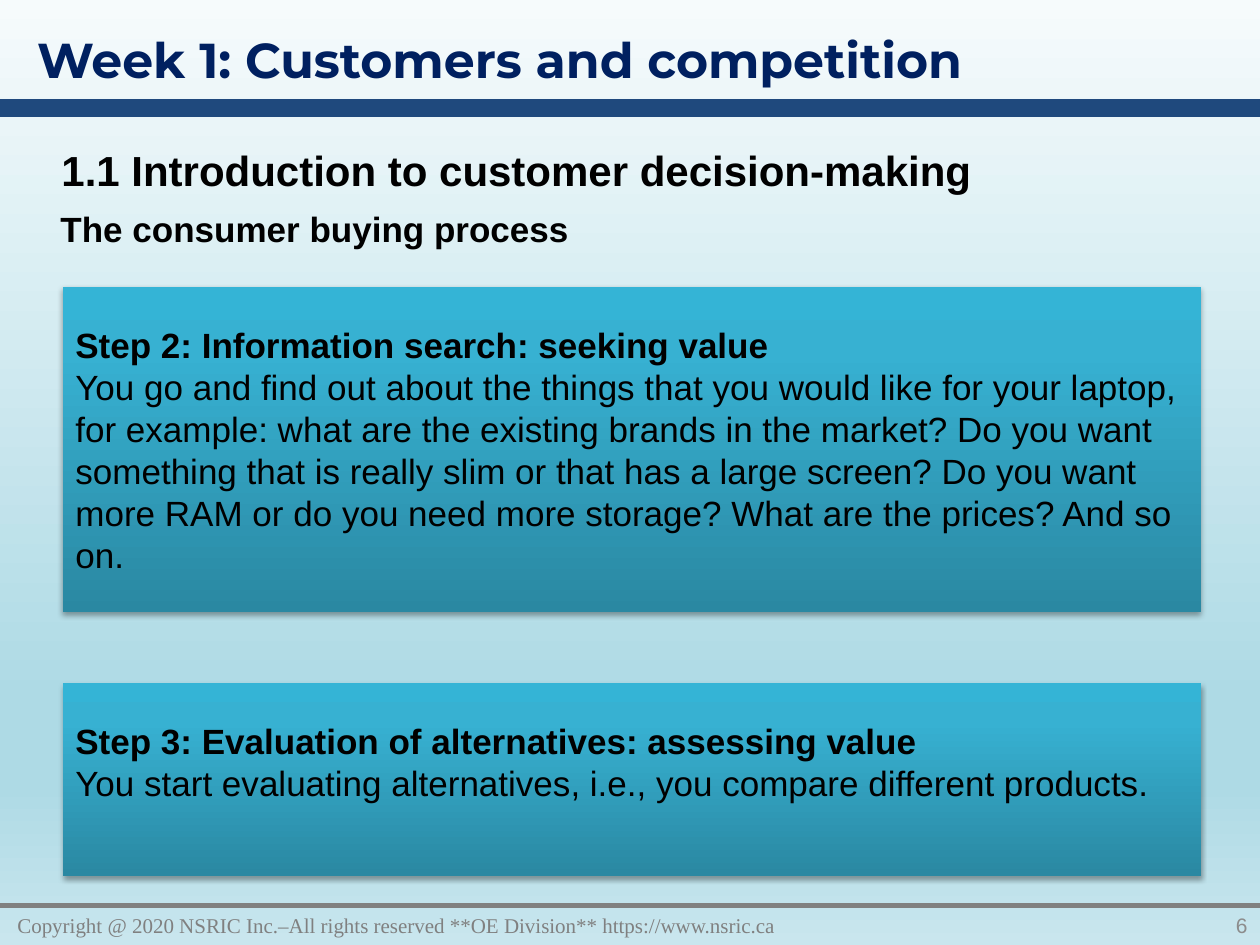
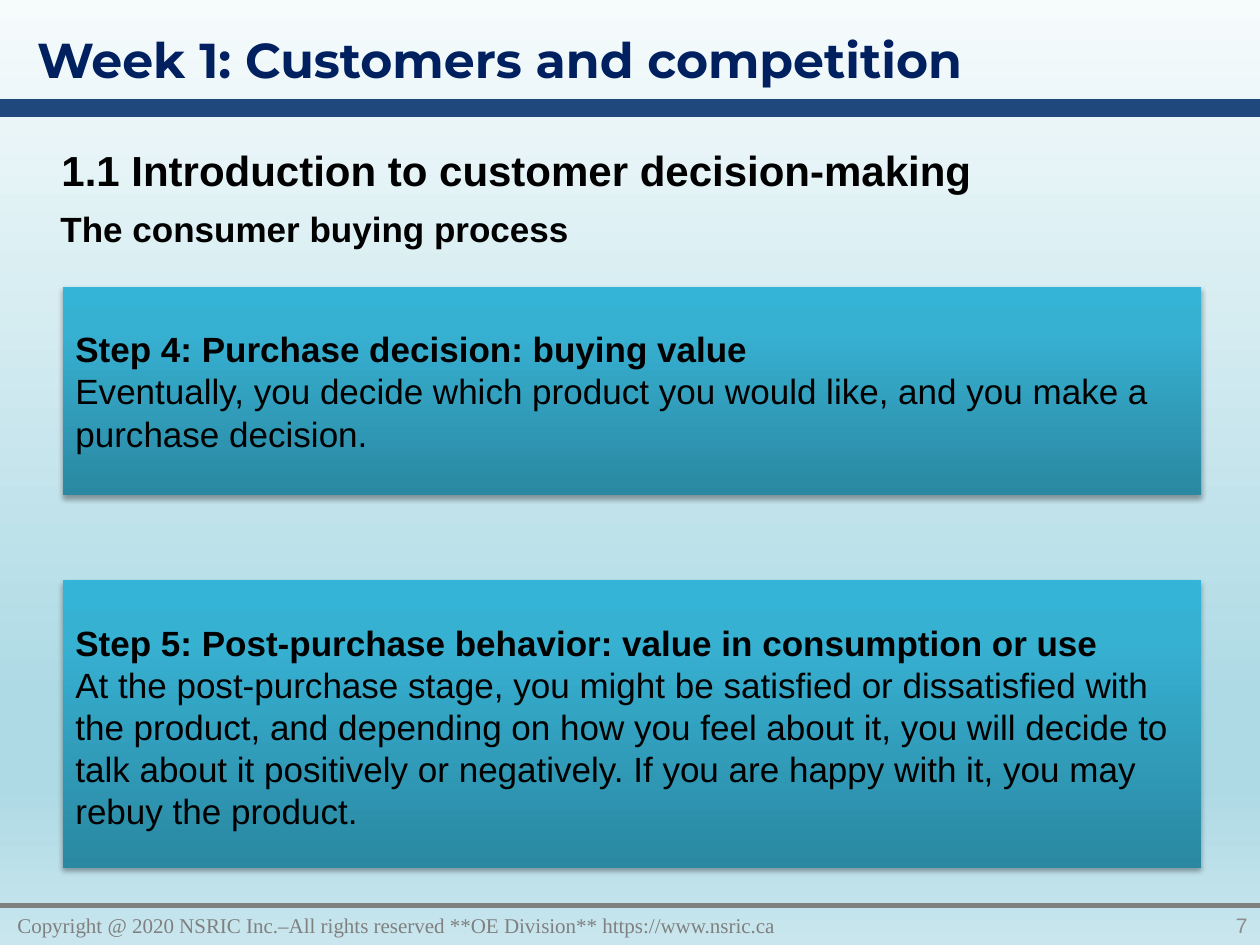
import pptx
import pptx.dml.color
import pptx.enum.shapes
import pptx.enum.text
import pptx.oxml
import pptx.oxml.ns
import pptx.util

Cm, Pt = pptx.util.Cm, pptx.util.Pt
RGB = pptx.dml.color.RGBColor.from_string
ANCHOR, ALIGN = pptx.enum.text.MSO_ANCHOR, pptx.enum.text.PP_ALIGN
NS = pptx.oxml.ns.nsdecls("a")


class Theme:
    sans, title_font, footer_font = "Arial", "Montserrat", "Times New Roman"
    ink, navy, band, rule, number = "000000", "002060", "1F497D", "808080", "8C8C8C"
    title_size, heading_size, body_size, footer_size = 28, 24, 20, 12
    sky = [(0, "F6FBFC"), (74, "AEDAE5"), (83, "AEDAE5"), (100, "C9E6EE")]
    card = [(0, "2A88A2"), (80, "37B1D2"), (100, "34B4D6")]


def set_gradient(props, stops, angle):
    """Replace the solid fill in a properties element by a linear gradient."""
    gs = "".join(f'<a:gs pos="{pos * 1000}"><a:srgbClr val="{color}"/></a:gs>'
                 for pos, color in stops)
    solid = props.find(pptx.oxml.ns.qn("a:solidFill"))
    props.replace(solid, pptx.oxml.parse_xml(
        f'<a:gradFill {NS} rotWithShape="1"><a:gsLst>{gs}</a:gsLst>'
        f'<a:lin ang="{angle * 60000}" scaled="0"/></a:gradFill>'))


def set_text(p, text, font, size, color, bold=False):
    p.text = text
    p.font.name, p.font.size, p.font.bold = font, Pt(size), bold
    p.font.color.rgb = RGB(color)


# Each step: top, height, bottom inset (cm), heading, text
slides = [
    [(5.79, 6.55, 0.13, "Step 2: Information search: seeking value",
      "You go and find out about the things that you would like for your laptop, "
      "for example: what are the existing brands in the market? Do you want "
      "something that is really slim or that has a large screen? Do you want "
      "more RAM or do you need more storage? What are the prices? And so on."),
     (13.77, 3.89, 0.86, "Step 3: Evaluation of alternatives: assessing value",
      "You start evaluating alternatives, i.e., you compare different products.")],
    [(5.79, 4.19, 0.13, "Step 4: Purchase decision: buying value",
      "Eventually, you decide which product you would like, and you make a "
      "purchase decision."),
     (11.7, 5.8, 0.03, "Step 5: Post-purchase behavior: value in consumption or use",
      "At the post-purchase stage, you might be satisfied or dissatisfied with "
      "the product, and depending on how you feel about it, you will decide to "
      "talk about it positively or negatively. If you are happy with it, you may "
      "rebuy the product.")],
]

prs = pptx.Presentation()
prs.slide_width, prs.slide_height = Cm(25.4), Cm(19.05)

for number, steps in enumerate(slides, start=6):
    s = prs.slides.add_slide(prs.slide_layouts[6])
    s.background.fill.solid()
    set_gradient(s.element.cSld.bg.bgPr, Theme.sky, 90)

    for y, color, width in [(2.18, Theme.band, 10), (18.26, Theme.rule, 3)]:
        line = s.shapes.add_connector(pptx.enum.shapes.MSO_CONNECTOR.STRAIGHT,
                                      0, Cm(y), prs.slide_width, Cm(y))
        line.line.color.rgb = RGB(color)
        line.line.width = Pt(width)
        line.element.spPr.append(pptx.oxml.parse_xml(f"<a:effectLst {NS}/>"))

    labels = [
        ((0.1, 18.26, 21, 0.79), ANCHOR.MIDDLE, ALIGN.LEFT,
         "Copyright @ 2020 NSRIC Inc.–All rights reserved **OE Division** https://www.nsric.ca",
         Theme.footer_font, Theme.footer_size, Theme.rule, False),
        ((21.82, 18.26, 3.58, 0.79), ANCHOR.MIDDLE, ALIGN.RIGHT,
         str(number), Theme.sans, Theme.footer_size, Theme.number, False),
        ((0.97, 4.06, 23.55, 1.12), ANCHOR.TOP, ALIGN.LEFT,
         "The consumer buying process", Theme.sans, Theme.body_size, Theme.ink, True),
        ((0.5, 0.48, 22.25, 1.45), ANCHOR.TOP, ALIGN.LEFT,
         "Week 1: Customers and competition",
         Theme.title_font, Theme.title_size, Theme.navy, True),
        ((0.99, 2.79, 23.24, 1.27), ANCHOR.TOP, ALIGN.LEFT,
         "1.1 Introduction to customer decision-making",
         Theme.sans, Theme.heading_size, Theme.ink, True),
    ]
    for box, anchor, align, *style in labels:
        tf = s.shapes.add_textbox(*map(Cm, box)).text_frame
        tf.word_wrap = True
        tf.vertical_anchor = anchor
        tf.paragraphs[0].alignment = align
        set_text(tf.paragraphs[0], *style)

    for top, height, inset, heading, text in steps:
        sp = s.shapes.add_shape(pptx.enum.shapes.MSO_SHAPE.RECTANGLE,
                                Cm(1.27), Cm(top), Cm(22.94), Cm(height))
        sp.line.fill.background()
        sp.fill.solid()
        set_gradient(sp.element.spPr, Theme.card, 270)
        sp.element.spPr.append(pptx.oxml.parse_xml(
            f'<a:effectLst {NS}><a:outerShdw blurRad="{Pt(3.1)}" dist="{Pt(1.8)}" '
            'dir="5400000" rotWithShape="0"><a:srgbClr val="000000">'
            '<a:alpha val="35000"/></a:srgbClr></a:outerShdw></a:effectLst>'))
        tf = sp.text_frame
        tf.word_wrap = True
        tf.vertical_anchor = ANCHOR.MIDDLE
        tf.margin_bottom = Cm(inset)
        for p, content, bold in [(tf.paragraphs[0], heading, True),
                                 (tf.add_paragraph(), text, False)]:
            p.alignment = ALIGN.LEFT
            set_text(p, content, Theme.sans, Theme.body_size, Theme.ink, bold)

prs.save("out.pptx")
